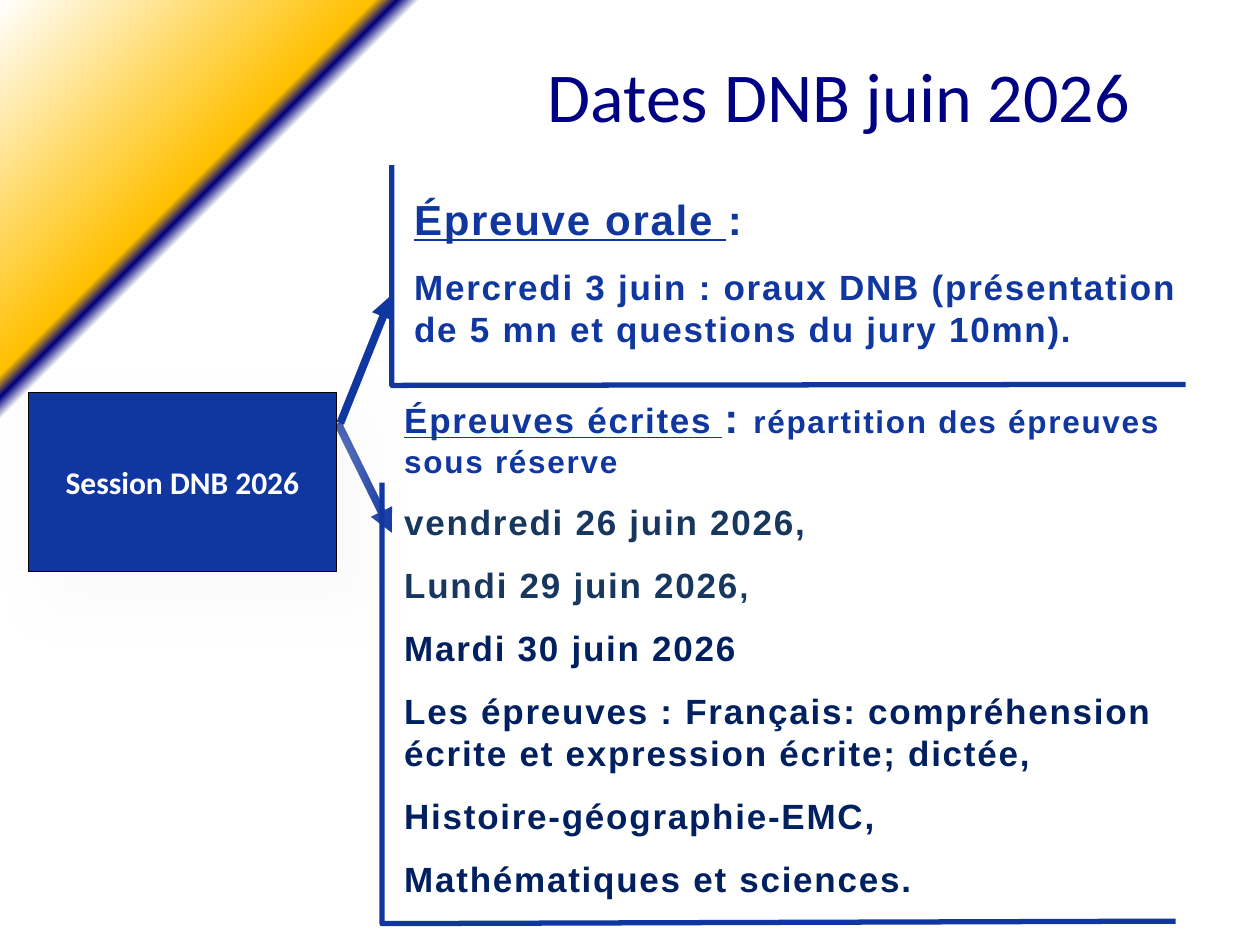
from lxml import etree
from pptx import Presentation
from pptx import util as u
from pptx.dml.color import RGBColor
from pptx.enum import shapes, text
from pptx.oxml import parse_xml
from pptx.oxml.ns import nsdecls, qn

NAVY, BLUE, SLATE, DEEP, WHITE = "000082", "1036A0", "17375E", "002060", "FFFFFF"


def colour(hex_value):
    return RGBColor.from_string(hex_value)


class Sheet:
    """Style and current slide, with one method per kind of element."""

    def __init__(self, slide, accent=BLUE):
        self.slide = slide
        self.items = slide.shapes
        self.accent = accent

    def background(self, stops, angle):
        fill = self.slide.background.fill
        fill.gradient()
        stop_list = self.slide._element.find(".//" + qn("a:gsLst"))
        for stop in list(stop_list):
            stop_list.remove(stop)
        for position, value in stops:
            stop_list.append(parse_xml(
                f'<a:gs {nsdecls("a")} pos="{position * 1000}">'
                f'<a:srgbClr val="{value}"/></a:gs>'))
        fill.gradient_angle = 360 - angle

    def style(self, font, name, size, value, bold=False):
        font.name, font.size, font.bold = name, u.Pt(size), bold
        font.color.rgb = colour(value)

    def label(self, frame, words, size, value, bold=False):
        frame.vertical_anchor = text.MSO_ANCHOR.MIDDLE
        paragraph = frame.paragraphs[0]
        paragraph.text = words
        paragraph.alignment = text.PP_ALIGN.CENTER
        self.style(paragraph.font, "Calibri", size, value, bold)

    def title(self, box, words):
        frame = self.items.add_textbox(*map(u.Cm, box)).text_frame
        frame.word_wrap = True
        self.label(frame, words, 40, NAVY)

    def block(self, box, words):
        block = self.items.add_shape(shapes.MSO_SHAPE.RECTANGLE, *map(u.Cm, box))
        block.fill.solid()
        block.fill.fore_color.rgb = colour(self.accent)
        block.line.color.rgb = colour("000000")
        block.line.width = u.Pt(0.75)
        block.text_frame.word_wrap = False
        self.label(block.text_frame, words, 18, WHITE, bold=True)
        # Soft pale shadow, down and to the right
        block._element.spPr.append(parse_xml(
            f'<a:effectLst {nsdecls("a")}><a:outerShdw blurRad="{u.Pt(29)}" '
            f'dist="{u.Pt(19.8)}" dir="2700000" algn="tl" rotWithShape="0">'
            '<a:srgbClr val="F2F2F2"><a:alpha val="40000"/></a:srgbClr>'
            '</a:outerShdw></a:effectLst>'))

    def details(self, box, paragraphs):
        """Each paragraph is (size, colour, runs); a run is (words, own size, underline)."""
        frame = self.items.add_textbox(*map(u.Cm, box)).text_frame
        frame.word_wrap = True
        frame.auto_size = text.MSO_AUTO_SIZE.SHAPE_TO_FIT_TEXT
        for index, (size, value, runs) in enumerate(paragraphs):
            paragraph = frame.add_paragraph() if index else frame.paragraphs[0]
            paragraph.space_after = u.Pt(12)
            self.style(paragraph.font, "Arial", size, value, bold=True)
            for words, own_size, underline in runs:
                run = paragraph.add_run()
                run.text = words
                if own_size:
                    run.font.size = u.Pt(own_size)
                if underline:
                    run.font.underline = True
                run._r.get_or_add_rPr().set("spc", "100")

    def bracket(self, *points):
        start, *others = [tuple(map(u.Cm, point)) for point in points]
        builder = self.items.build_freeform(*start)
        builder.add_line_segments(others, close=False)
        bracket = builder.convert_to_shape()
        bracket.shadow.inherit = False
        bracket.fill.background()
        bracket.line.color.rgb = colour(self.accent)
        bracket.line.width = u.Pt(3)

    def arrow(self, start, end):
        arrow = self.items.add_connector(
            shapes.MSO_CONNECTOR.STRAIGHT, *map(u.Cm, start + end))
        arrow.line.color.rgb = colour(self.accent)
        arrow.line.width = u.Pt(4.5)
        outline = arrow.line._get_or_add_ln()
        etree.SubElement(outline, qn("a:tailEnd"), type="triangle")
        etree.SubElement(arrow._element.spPr, qn("a:effectLst"))


def plain(words, value, size=20):
    return size, value, [(words, None, False)]


def main():
    deck = Presentation()
    deck.slide_width, deck.slide_height = u.Cm(25.4), u.Cm(19.05)
    sheet = Sheet(deck.slides.add_slide(deck.slide_layouts[6]))
    sheet.background([(0, WHITE), (81, WHITE), (82, NAVY), (83, "FFC000"),
                      (100, WHITE)], 225)

    # Session, with its arrow to the written exams behind it
    sheet.arrow((6.81, 8.53), (7.9, 10.74))
    sheet.title((8.41, 0.33, 17, 3.17), "Dates DNB juin 2026")
    sheet.block((0.58, 7.92, 6.2, 3.6), "Session DNB 2026")

    # Written exams
    sheet.details((7.9, 7.77, 17, 10.59), [
        (20, BLUE, [("Épreuves écrites ", None, True), (": ", 24, False),
                    ("répartition des épreuves sous réserve", 18, False)]),
        plain("vendredi 26 juin 2026,", SLATE),
        (20, SLATE, [("Lundi 29 juin 2026", None, False), (",", 18, False)]),
        plain("Mardi 30 juin 2026", DEEP),
        plain("Les épreuves : Français: compréhension écrite et expression "
              "écrite; dictée,", DEEP),
        plain("Histoire-géographie-EMC,", DEEP),
        plain("Mathématiques et sciences.", DEEP),
    ])
    sheet.bracket((7.7, 9.73), (7.7, 18.62), (23.7, 18.57))

    # Oral exam
    sheet.details((8.1, 3.78, 16.8, 3.43), [
        (24, BLUE, [("Épreuve orale ", None, True), (":", None, False)]),
        plain("Mercredi 3 juin : oraux DNB (présentation de 5 mn et questions "
              "du jury 10mn).", BLUE),
    ])
    sheet.bracket((7.9, 3.33), (7.9, 7.77), (23.9, 7.75))
    sheet.arrow((6.86, 8.53), (7.9, 5.94))

    deck.save("out.pptx")


if __name__ == "__main__":
    main()
